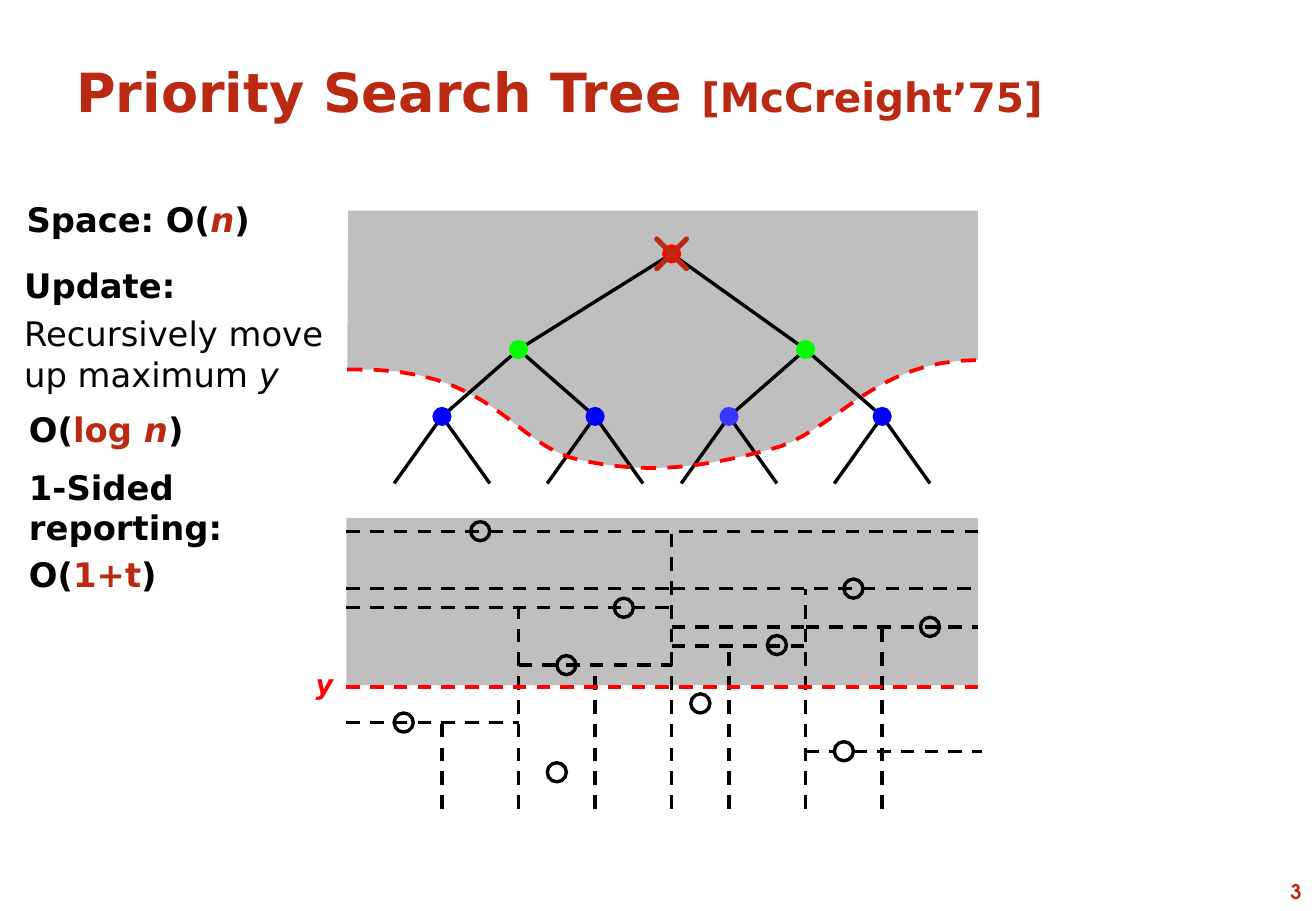
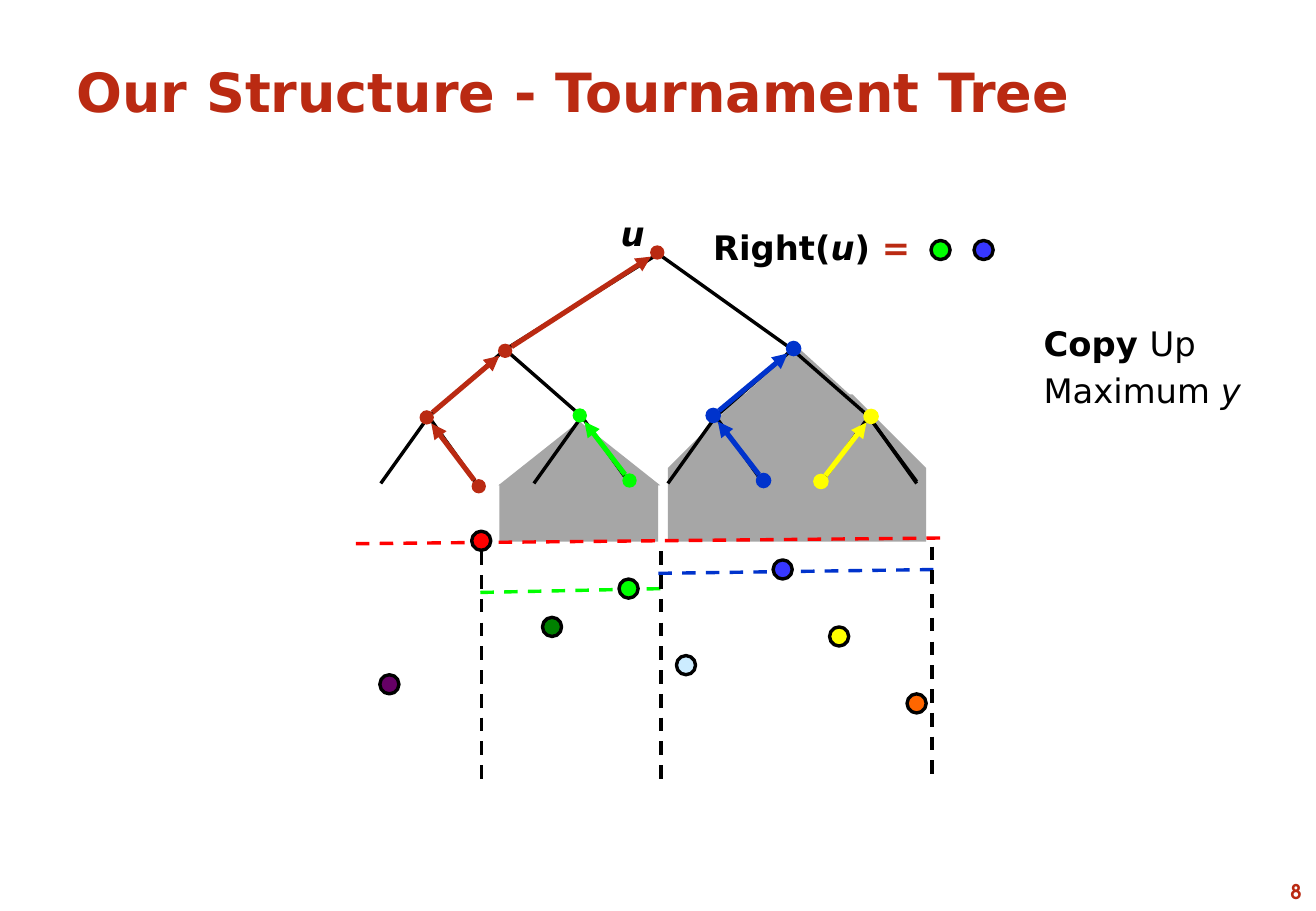
from dataclasses import dataclass
from math import hypot
from typing import Optional

from pptx import Presentation
from pptx.dml.color import RGBColor
from pptx.enum.dml import MSO_LINE
from pptx.enum.shapes import MSO_CONNECTOR, MSO_SHAPE
from pptx.enum.text import MSO_ANCHOR, MSO_AUTO_SIZE, PP_ALIGN
from pptx.oxml.ns import qn
from pptx.slide import Slide
from pptx.util import Inches, Pt

DASH = MSO_LINE.DASH
STRAIGHT = MSO_CONNECTOR.STRAIGHT
ELLIPSE = MSO_SHAPE.OVAL
RECTANGLE = MSO_SHAPE.RECTANGLE
TRIANGLE = MSO_SHAPE.ISOSCELES_TRIANGLE
SNIPPED = MSO_SHAPE.SNIP_2_SAME_RECTANGLE
CROSS = MSO_SHAPE.MATH_MULTIPLY
LEFT, RIGHT = PP_ALIGN.LEFT, PP_ALIGN.RIGHT
TOP, MIDDLE = MSO_ANCHOR.TOP, MSO_ANCHOR.MIDDLE
FIT_TEXT, FIXED = MSO_AUTO_SIZE.SHAPE_TO_FIT_TEXT, MSO_AUTO_SIZE.NONE

Spot = tuple[float, float]
Box = tuple[float, float, float, float]


@dataclass(frozen=True)
class Theme:
    font: str = "DejaVu Sans"
    number_font: str = "TeX Gyre Adventor"
    accent: str = "BA2A12"
    ink: str = "000000"
    paper: str = "FFFFFF"
    band: str = "BFBFBF"
    subtree: str = "A6A6A6"
    red: str = "FF0000"
    green: str = "00FF00"
    blue: str = "0000FF"
    violet: str = "3737FF"
    royal: str = "0033CC"
    yellow: str = "FFFF00"
    orange: str = "FF6600"
    forest: str = "008000"
    purple: str = "660066"
    sky: str = "CCECFF"
    title: float = 32
    citation: float = 24
    body: float = 20
    label: float = 16
    number: float = 12
    thin: float = 2
    curve: float = 2.25
    thick: float = 3
    hairline: float = 0.75


THEME = Theme()


@dataclass(frozen=True)
class Grid:
    left: float
    top: float
    pitch: float

    def at(self, spot: Spot) -> tuple[int, int]:
        return (Inches(self.left + spot[0] * self.pitch),
                Inches(self.top + spot[1] * self.pitch))

    def box(self, box: Box) -> tuple[int, int, int, int]:
        return (*self.at(box[:2]), Inches(box[2] * self.pitch), Inches(box[3] * self.pitch))


PAGE = Grid(0, 0, 0.1)
CELL = 0.63 / 4
SEARCH_GRID = Grid(2.85, 2.09, CELL)
TOURNAMENT_GRID = Grid(2.74, 2.09, CELL)


@dataclass(frozen=True)
class Words:
    text: str
    color: str = THEME.ink
    bold: bool = True
    italic: bool = False
    size: float = THEME.body
    font: str = THEME.font


@dataclass(frozen=True)
class Stroke:
    color: str = THEME.ink
    width: float = THEME.thin
    dashed: bool = False
    arrow: bool = False


@dataclass(frozen=True)
class Climb:
    start: Spot
    end: Spot
    color: str


SOLID = Stroke()
DASHED = Stroke(dashed=True)
BREAK = Words("\n")

ROOT: Spot = (17, 0)
INNER: list[Spot] = [(9, 5), (24, 5)]
LOWER: list[Spot] = [(col, 8.5) for col in (5, 13, 20, 28)]
EDGES = ([(node, (node[0] + side, 12)) for node in LOWER for side in (-2.5, 2.5)]
         + [(node, INNER[i // 2]) for i, node in enumerate(LOWER)]
         + [(node, ROOT) for node in INNER])


def paint_line(line, stroke: Stroke) -> None:
    line.color.rgb = RGBColor.from_string(stroke.color)
    line.width = Pt(stroke.width)
    if stroke.dashed:
        line.dash_style = DASH


def paint(shape, fill: Optional[str], stroke: Optional[Stroke]) -> None:
    shape.shadow.inherit = False
    if fill:
        shape.fill.solid()
        shape.fill.fore_color.rgb = RGBColor.from_string(fill)
    else:
        shape.fill.background()
    if stroke:
        paint_line(shape.line, stroke)
    else:
        shape.line.fill.background()


def draw_shape(slide: Slide, grid: Grid, preset, box: Box, fill: Optional[str] = None,
               stroke: Optional[Stroke] = None, adjustments: tuple[float, ...] = ()) -> None:
    shape = slide.shapes.add_shape(preset, *grid.box(box))
    for i, value in enumerate(adjustments):
        shape.adjustments[i] = value
    paint(shape, fill, stroke)


def draw_dot(slide: Slide, grid: Grid, center: Spot, fill: Optional[str] = None,
             stroke: Optional[Stroke] = None, size: float = 1) -> None:
    box = (center[0] - size / 2, center[1] - size / 2, size, size)
    draw_shape(slide, grid, ELLIPSE, box, fill, stroke)


def draw_line(slide: Slide, grid: Grid, start: Spot, end: Spot, stroke: Stroke = SOLID) -> None:
    connector = slide.shapes.add_connector(STRAIGHT, *grid.at(start), *grid.at(end))
    paint_line(connector.line, stroke)
    properties = connector._element.spPr
    if stroke.arrow:
        outline = properties.find(qn("a:ln"))
        outline.append(outline.makeelement(qn("a:tailEnd"), {"type": "triangle"}))
    properties.append(properties.makeelement(qn("a:effectLst"), {}))


def draw_outline(slide: Slide, grid: Grid, spots: list[Spot], closed: bool,
                 fill: Optional[str], stroke: Optional[Stroke]) -> None:
    first, *rest = [grid.at(spot) for spot in spots]
    builder = slide.shapes.build_freeform(*first, scale=1.0)
    builder.add_line_segments(rest, close=closed)
    paint(builder.convert_to_shape(), fill, stroke)


def draw_tree(slide: Slide, grid: Grid) -> None:
    for start, end in EDGES:
        draw_line(slide, grid, start, end)


def write(slide: Slide, box: Box, paragraphs: list[list[Words]], wrap: bool = False,
          align=LEFT, anchor=TOP, fit=FIT_TEXT, spaced: bool = True) -> None:
    frame = slide.shapes.add_textbox(*PAGE.box(box)).text_frame
    frame.word_wrap = wrap
    frame.auto_size = fit
    frame.vertical_anchor = anchor
    for i, content in enumerate(paragraphs):
        paragraph = frame.add_paragraph() if i else frame.paragraphs[0]
        paragraph.alignment = align
        if spaced:
            paragraph.space_before = Pt(content[0].size * 0.2)
        for words in content:
            if words is BREAK:
                paragraph.add_line_break()
                continue
            run = paragraph.add_run()
            run.text = words.text
            run.font.name = words.font
            run.font.size = Pt(words.size)
            run.font.bold = words.bold
            run.font.italic = words.italic
            run.font.color.rgb = RGBColor.from_string(words.color)


def start_slide(deck, title: list[Words], number: str) -> Slide:
    slide = deck.slides.add_slide(deck.slide_layouts[6])
    write(slide, (5.3, 3.6, 97.5, 7.7), [title], wrap=True, anchor=MIDDLE, fit=FIXED, spaced=False)
    page_number = Words(number, THEME.accent, size=THEME.number, font=THEME.number_font)
    write(slide, (98.3, 71.9, 9.8, 3), [[page_number]], wrap=True, align=RIGHT, spaced=False)
    return slide


def bezier(knots: list[Spot], steps: int = 16) -> list[Spot]:
    spots = [knots[0]]
    for i in range(0, len(knots) - 1, 3):
        for step in range(1, steps + 1):
            t = step / steps
            weights = ((1 - t) ** 3, 3 * t * (1 - t) ** 2, 3 * t * t * (1 - t), t ** 3)
            col, row = (sum(w * knot[axis] for w, knot in zip(weights, knots[i:i + 4]))
                        for axis in (0, 1))
            spots.append((col, row))
    return spots


def priority_search_tree(deck) -> None:
    slide = start_slide(deck, [
        Words("Priority Search Tree ", THEME.accent, size=THEME.title),
        Words("[McCreight’75]", THEME.accent, size=THEME.citation)], "3")
    grid = SEARCH_GRID
    frontier = bezier([(0.05, 6.05), (7.8, 5.8), (8.65, 10.1), (12.3, 10.8), (15.95, 11.55),
                       (18.6, 11.15), (22.05, 10.25), (25.5, 9.45), (27.4, 5.55), (33, 5.55)])
    draw_outline(slide, grid, [(0.1, -2.25), *frontier, (33, -2.25)], True, THEME.band, None)
    draw_shape(slide, grid, RECTANGLE, (0, 13.8, 33, 8.75), THEME.band)

    for left, right, row in [(24, 33.2, 26), (0, 9, 24.5), (9, 17, 21.5), (17, 24, 20.5),
                             (24, 33, 19.5), (17, 24, 19.5), (0, 17, 18.5), (17, 33, 17.5),
                             (0, 17, 17.5), (0, 33, 14.5)]:
        draw_line(slide, grid, (left, row), (right, row), DASHED)
    for col, row in [(5, 24.5), (9, 18.5), (13, 21.5), (17, 14.5), (20, 20.5),
                     (24, 17.5), (28, 19.5), (28, 26)]:
        draw_line(slide, grid, (col, 29), (col, row), DASHED)
    for point in [(30.5, 19.5), (11.5, 21.5), (3, 24.5), (22.5, 20.45), (18.5, 23.5),
                  (14.5, 18.5), (26.5, 17.5), (7, 14.5), (11, 27.1)]:
        draw_dot(slide, grid, point, stroke=SOLID)
    draw_dot(slide, grid, (26, 26), THEME.paper, SOLID)

    draw_tree(slide, grid)
    fills = [THEME.red, THEME.green, THEME.green,
             THEME.blue, THEME.blue, THEME.violet, THEME.blue]
    for node, fill in zip([ROOT, *INNER, *LOWER], fills):
        draw_dot(slide, grid, node, fill)
    draw_shape(slide, grid, CROSS, (15.5, -1.5, 3, 3),
               stroke=Stroke(THEME.accent, THEME.thick), adjustments=(0,))

    draw_line(slide, grid, (0, 22.65), (33, 22.65), Stroke(THEME.red, dashed=True))
    draw_outline(slide, grid, frontier, False, None,
                 Stroke(THEME.red, THEME.curve, dashed=True))

    write(slide, (1.2, 15.85, 21, 4.4),
          [[Words("Space: O("), Words("n", THEME.accent, italic=True), Words(")")]])
    write(slide, (1, 21.3, 14.5, 4.4), [[Words("Update:")]])
    write(slide, (1, 25.3, 27.2, 7.7), [[Words("Recursively move up maximum ", bold=False),
                                         Words("y", bold=False, italic=True)]], wrap=True)
    write(slide, (1.4, 33.15, 15.3, 4.4),
          [[Words("O("), Words("log ", THEME.accent),
            Words("n", THEME.accent, italic=True), Words(")")]])
    write(slide, (1.4, 37.9, 18.9, 11.8),
          [[Words("1-Sided"), BREAK, Words("reporting:")],
           [Words("O("), Words("1+t", THEME.accent), Words(")")]])
    write(slide, (25, 54.45, 3.5, 3.7),
          [[Words("y", THEME.red, italic=True, size=THEME.label)]])


def rim(color: str) -> Optional[Stroke]:
    return Stroke(color, THEME.hairline) if color in (THEME.royal, THEME.yellow) else None


def draw_climbs(slide: Slide, grid: Grid, climbs: list[Climb], gap: float = 0.4) -> None:
    stops = {spot: climb.color for climb in climbs for spot in (climb.start, climb.end)}
    for spot, color in stops.items():
        draw_dot(slide, grid, spot, color, rim(color), 0.75)
    for climb in climbs:
        (x1, y1), (x2, y2) = climb.start, climb.end
        length = hypot(x2 - x1, y2 - y1)
        dx, dy = (x2 - x1) * gap / length, (y2 - y1) * gap / length
        draw_line(slide, grid, (x1 + dx, y1 + dy), (x2 - dx, y2 - dy),
                  Stroke(climb.color, THEME.thick, arrow=True))


def tournament_tree(deck) -> None:
    slide = start_slide(deck, [Words("Our Structure - Tournament Tree", THEME.accent,
                                     size=THEME.title)], "8")
    grid = TOURNAMENT_GRID
    for start, end, color in [((17, 16.7), (31.5, 16.5), THEME.royal),
                              ((7.7, 17.7), (17.15, 17.5), THEME.green)]:
        draw_line(slide, grid, start, end, Stroke(color, dashed=True))
    for preset, box, adjustments in [
            (SNIPPED, (17.5, 7.35, 13.5, 7.7), (0.5, 0)),
            (TRIANGLE, (21.45, 4.85, 5.6, 2.55), ()),
            (TRIANGLE, (8.65, 8.75, 8.45, 3.35), ()),
            (RECTANGLE, (8.7, 12.05, 8.3, 3), ())]:
        draw_shape(slide, grid, preset, box, THEME.subtree, adjustments=adjustments)
    for col, row in [(7.75, 15.55), (17.15, 15.55), (31.3, 15.3)]:
        draw_line(slide, grid, (col, row), (col, row + 12), DASHED)

    draw_tree(slide, grid)
    draw_line(slide, grid, (30.5, 11.9), (27.95, 8.45))
    draw_climbs(slide, grid, [
        Climb((7.62, 12.15), (4.9, 8.55), THEME.accent),
        Climb((15.5, 11.85), (12.9, 8.45), THEME.green),
        Climb((22.5, 11.85), (19.87, 8.45), THEME.royal),
        Climb((25.5, 11.9), (28.12, 8.5), THEME.yellow),
        Climb((4.9, 8.55), (9, 5.07), THEME.accent),
        Climb((19.87, 8.45), (24.07, 4.95), THEME.royal),
        Climb((9, 5.07), (16.95, -0.07), THEME.accent)])

    draw_line(slide, grid, (1.2, 15.15), (32.05, 14.85), Stroke(THEME.red, dashed=True))
    for col, row, fill in [(30.5, 23.5, THEME.orange), (11.45, 19.5, THEME.forest),
                           (2.95, 22.5, THEME.purple), (23.5, 16.5, THEME.violet),
                           (18.45, 21.5, THEME.sky), (7.75, 15, THEME.red),
                           (26.45, 20, THEME.yellow), (15.45, 17.5, THEME.green),
                           (34, -0.2, THEME.violet), (31.75, -0.2, THEME.green)]:
        draw_dot(slide, grid, (col, row), fill, SOLID)

    write(slide, (84.9, 26.1, 18.4, 8.4),
          [[Words("Copy "), Words("Up", bold=False)],
           [Words("Maximum ", bold=False), Words("y", bold=False, italic=True)]])
    write(slide, (57.7, 18.2, 19.8, 4.4),
          [[Words("Right("), Words("u", italic=True), Words(")"), Words(" =", THEME.accent)]])
    write(slide, (50.1, 17, 4, 4.4), [[Words("u", italic=True)]])


def main() -> None:
    deck = Presentation()
    deck.slide_width, deck.slide_height = Inches(10.83), Inches(7.5)
    priority_search_tree(deck)
    tournament_tree(deck)
    deck.save("out.pptx")


if __name__ == "__main__":
    main()
